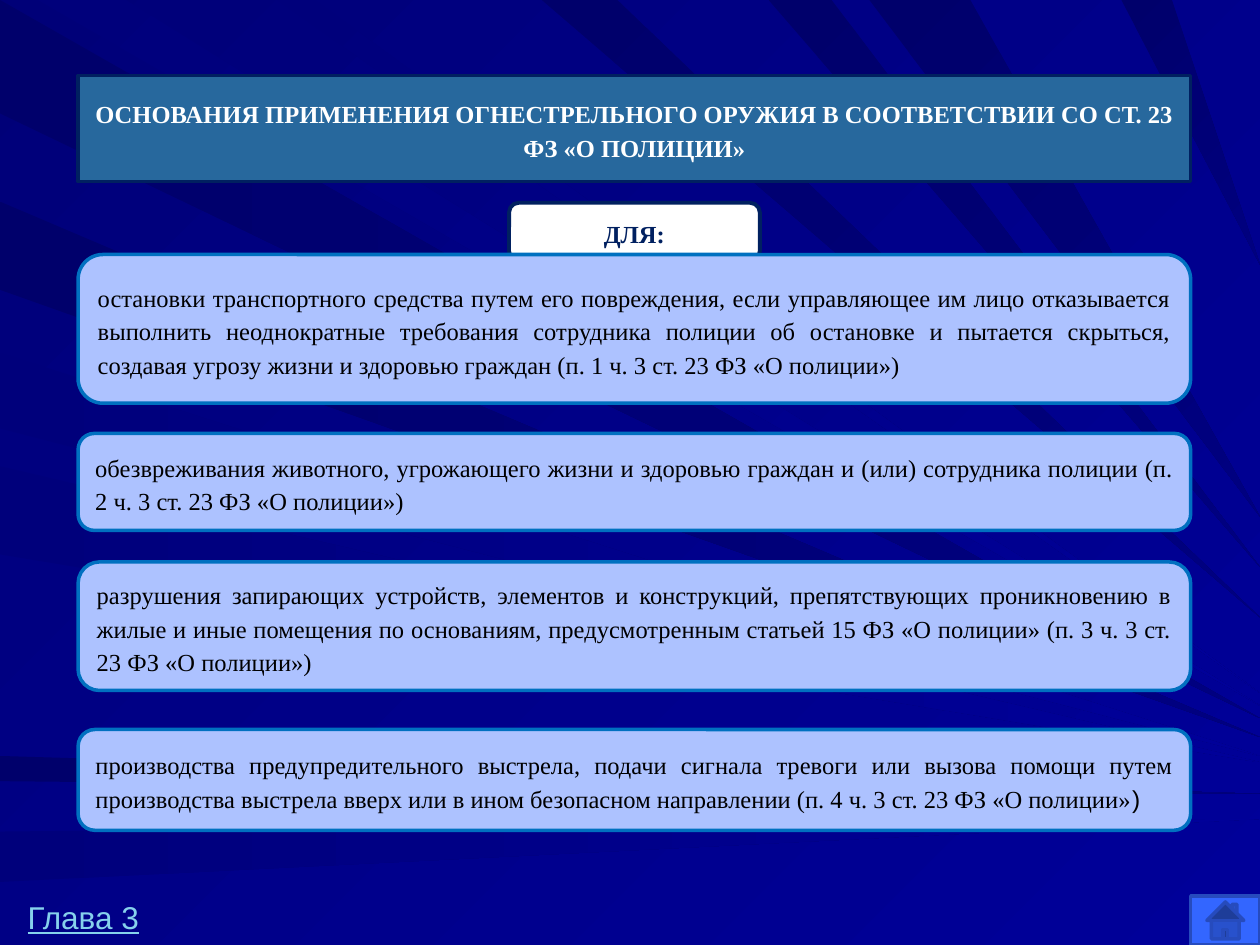
"""Build a slide on the legal grounds for the use of firearms."""
from pptx import Presentation
from pptx.dml.color import RGBColor as RGB
from pptx.enum.shapes import MSO_SHAPE as SHAPE
from pptx.enum.text import MSO_ANCHOR as ANCHOR, MSO_AUTO_SIZE as AUTO, PP_ALIGN as ALIGN
from pptx.oxml import parse_xml
from pptx.oxml.ns import nsdecls
from pptx.util import Inches, Pt

THEME = {
    "bg": ("000078", "000099"), "deep_ray": ("00006B", "000080"), "soft_ray": ("00007B", "000099"),
    "heading": "27689D", "navy": "002060", "white": "FFFFFF", "black": "000000",
    "card": "ADC2FF", "card_line": "0070C0",
    "button": "3366FF", "button_line": "264BBD", "link": "86D1EC",
    "serif": "Times New Roman", "sans": "Arial",
    "body_size": 14, "link_size": 18, "spacing": 1.15,
}
SLIDE_W, SLIDE_H = 10, 7.5
LEFT, WIDTH = 0.62, 8.83

HEADING = "ОСНОВАНИЯ ПРИМЕНЕНИЯ ОГНЕСТРЕЛЬНОГО ОРУЖИЯ В СООТВЕТСТВИИ СО СТ. 23 ФЗ «О ПОЛИЦИИ»"
PURPOSE = "ДЛЯ:"
CHAPTER = "Глава 3"
GROUNDS = [
    (2.02, 1.18, "остановки транспортного средства путем его повреждения, если управляющее им лицо "
     "отказывается выполнить неоднократные требования сотрудника полиции об остановке и пытается "
     "скрыться, создавая угрозу жизни и здоровью граждан (п. 1 ч. 3 ст. 23 ФЗ «О полиции»)", ""),
    (3.44, 0.77, "обезвреживания животного, угрожающего жизни и здоровью граждан и (или) сотрудника "
     "полиции (п. 2 ч. 3 ст. 23 ФЗ «О полиции»)", ""),
    (4.46, 1.02, "разрушения запирающих устройств, элементов и конструкций, препятствующих "
     "проникновению в жилые и иные помещения по основаниям, предусмотренным статьей 15 "
     "ФЗ «О полиции» (п. 3 ч. 3 ст. 23 ФЗ «О полиции»)", ""),
    (5.79, 0.8, "производства предупредительного выстрела, подачи сигнала тревоги или вызова помощи "
     "путем производства выстрела вверх или в ином безопасном направлении "
     "(п. 4 ч. 3 ст. 23 ФЗ «О полиции»", ")"),
]
LEFT_RAYS = [
    ("deep_ray", 0, 0.9, 5.7), ("deep_ray", 1.6, 2.3, 5.85), ("soft_ray", 2.8, 3.4, 6),
    ("soft_ray", 3.7, 4.4, 6.05), ("deep_ray", 6, 6.2, 6.3), ("soft_ray", 6.6, 7, 6.5),
]
TOP_RAYS = [
    ("soft_ray", 0.3, 1, 5.6), ("soft_ray", 2.2, 2.5, 5.5), ("deep_ray", 4.3, 4.9, 4.9),
    ("deep_ray", 6.1, 6.6, 4.5), ("deep_ray", 6.9, 7.7, 4.1), ("deep_ray", 8.9, 9.3, 2.1),
]


def set_gradient(fill, colors, angle):
    fill.gradient()
    fill.gradient_angle = (360 - angle) % 360
    for stop, color in zip(fill.gradient_stops, colors):
        stop.color.rgb = RGB.from_string(color)


def set_solid(fill, color):
    fill.solid()
    fill.fore_color.rgb = RGB.from_string(color)


def add_ray(s, tone, base, tip_y, angle):
    corners = [(Inches(x), Inches(y)) for x, y in (*base, (SLIDE_W, tip_y))]
    builder = s.shapes.build_freeform(*corners[0], scale=1.0)
    builder.add_line_segments(corners[1:], close=True)
    sp = builder.convert_to_shape()
    sp.shadow.inherit = False
    sp.line.fill.background()
    set_gradient(sp.fill, THEME[tone], angle)


def add_rays(s):
    for tone, start, end, tip_y in LEFT_RAYS:
        add_ray(s, tone, ((0, start), (0, end)), tip_y, 0)
    for tone, start, end, tip_y in TOP_RAYS:
        add_ray(s, tone, ((start, 0), (end, 0)), tip_y, 45)


def paint(sp, fill, line, width=2):
    set_solid(sp.fill, fill)
    set_solid(sp.line.fill, line)
    sp.line.width = Pt(width)


def add_box(s, kind, box, fill, line, width=2):
    sp = s.shapes.add_shape(kind, *map(Inches, box))
    sp.shadow.inherit = False
    paint(sp, fill, line, width)
    return sp


def format_run(r, color, font, size, bold=False):
    r.font.name, r.font.size, r.font.bold = font, Pt(size), bold
    r.font.color.rgb = RGB.from_string(color)


def write(sp, text, color, align=ALIGN.CENTER, bold=False, tail=""):
    tf = sp.text_frame
    tf.word_wrap, tf.auto_size, tf.vertical_anchor = True, AUTO.NONE, ANCHOR.MIDDLE
    p = tf.paragraphs[0]
    p.alignment, p.line_spacing = align, THEME["spacing"]
    for part, font in ((text, THEME["serif"]), (tail, THEME["sans"])):
        if part:
            r = p.add_run()
            r.text = part
            format_run(r, color, font, THEME["body_size"], bold)


def add_heading(s):
    sp = s.shapes.title
    s.shapes._spTree.append(sp._element)
    sp.left, sp.top, sp.width, sp.height = map(Inches, (LEFT, 0.6, WIDTH, 0.84))
    sp._element.spPr.append(parse_xml(
        f'<a:prstGeom {nsdecls("a")} prst="roundRect"><a:avLst/></a:prstGeom>'))
    paint(sp, THEME["heading"], THEME["navy"])
    write(sp, HEADING, THEME["white"], bold=True)


def add_chapter(s):
    tf = s.shapes.add_textbox(*map(Inches, (0.12, 7.08, 1.09, 0.4))).text_frame
    tf.word_wrap, tf.auto_size = False, AUTO.SHAPE_TO_FIT_TEXT
    tf.text = CHAPTER
    r = tf.paragraphs[0].runs[0]
    format_run(r, THEME["link"], THEME["sans"], THEME["link_size"])
    r.font.underline = True


def main():
    prs = Presentation()
    prs.slide_width, prs.slide_height = Inches(SLIDE_W), Inches(SLIDE_H)
    s = prs.slides.add_slide(prs.slide_layouts[5])
    set_gradient(s.background.fill, THEME["bg"], 45)
    add_rays(s)
    add_box(s, SHAPE.ACTION_BUTTON_HOME, (9.45, 7.11, 0.55, 0.39),
            THEME["button"], THEME["button_line"])
    add_heading(s)
    sp = add_box(s, SHAPE.ROUNDED_RECTANGLE, (4.04, 1.61, 1.99, 0.46),
                 THEME["white"], THEME["navy"], 2.25)
    write(sp, PURPOSE, THEME["navy"], bold=True)
    for top, height, text, tail in GROUNDS:
        sp = add_box(s, SHAPE.ROUNDED_RECTANGLE, (LEFT, top, WIDTH, height),
                     THEME["card"], THEME["card_line"])
        write(sp, text, THEME["black"], ALIGN.JUSTIFY, tail=tail)
    add_chapter(s)
    prs.save("out.pptx")


if __name__ == "__main__":
    main()
